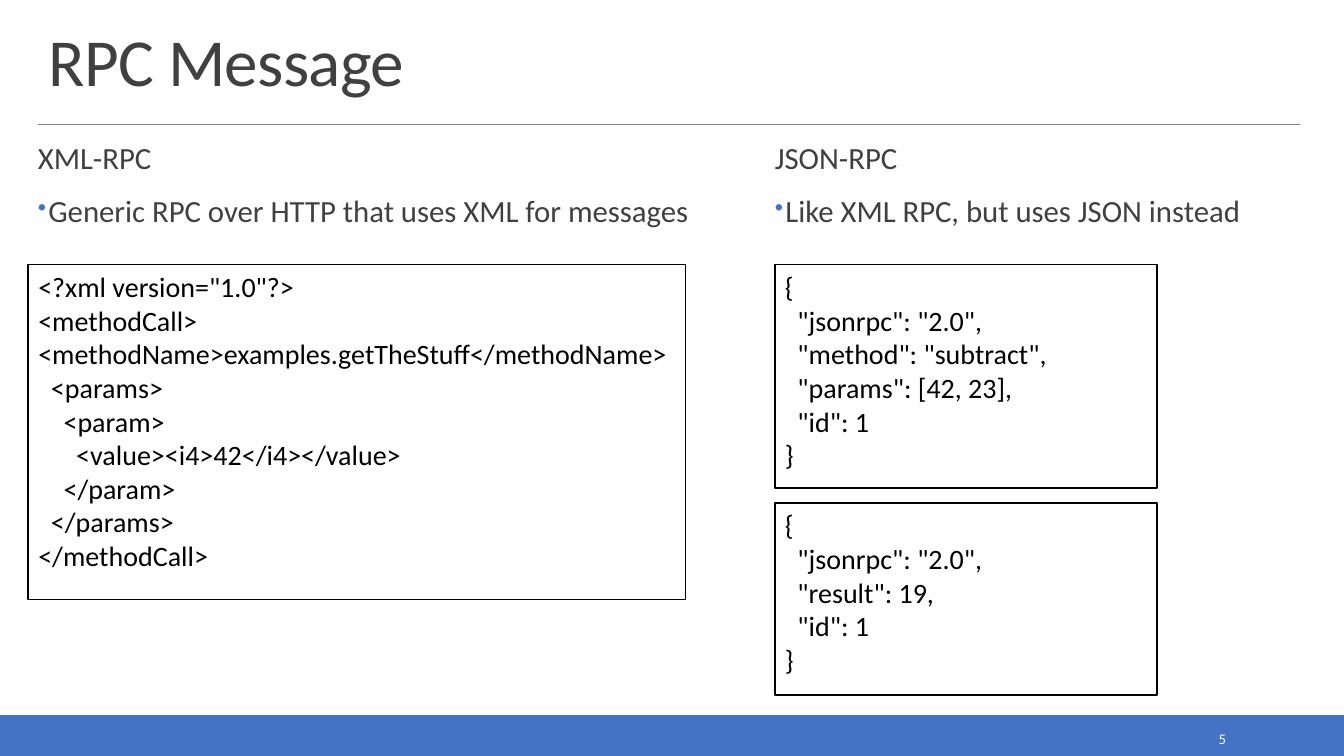
from dataclasses import dataclass

from lxml import etree
from pptx import Presentation
from pptx.dml.color import RGBColor
from pptx.enum.shapes import MSO_CONNECTOR, MSO_SHAPE
from pptx.enum.text import MSO_ANCHOR, PP_ALIGN
from pptx.oxml.ns import qn
from pptx.util import Pt

RECTANGLE = MSO_SHAPE.RECTANGLE
STRAIGHT = MSO_CONNECTOR.STRAIGHT
TOP, MIDDLE, BOTTOM = MSO_ANCHOR.TOP, MSO_ANCHOR.MIDDLE, MSO_ANCHOR.BOTTOM
LEFT, RIGHT = PP_ALIGN.LEFT, PP_ALIGN.RIGHT
EMU_PER_PX = 9525
BLANK_LAYOUT = 6


@dataclass(frozen=True)
class Theme:
    font: str = "Calibri"
    accent: str = "4472C4"
    text: str = "404040"
    rule: str = "808080"
    code: str = "000000"
    paper: str = "FFFFFF"
    title_size: float = 48
    body_size: float = 22
    code_size: float = 20
    number_size: float = 10.5
    outline: float = 1.25
    rule_width: float = 0.5


THEME = Theme()

XML_CALL = """<?xml version="1.0"?>
<methodCall>
<methodName>examples.getTheStuff</methodName>
  <params>
    <param>
      <value><i4>42</i4></value>
    </param>
  </params>
</methodCall>"""

JSON_CALL = """{
  "jsonrpc": "2.0",
  "method": "subtract",
  "params": [42, 23],
  "id": 1
}"""

JSON_REPLY = """{
  "jsonrpc": "2.0",
  "result": 19,
  "id": 1
}"""


def px(*lengths):
    return [length * EMU_PER_PX for length in lengths]


def color(code):
    return RGBColor.from_string(code)


def format_runs(text_frame, size, ink):
    for paragraph in text_frame.paragraphs:
        for run in paragraph.runs:
            run.font.name = THEME.font
            run.font.size = Pt(size)
            run.font.color.rgb = color(ink)


def add_text(slide, box, text, size, ink, anchor=TOP):
    text_frame = slide.shapes.add_textbox(*px(*box)).text_frame
    text_frame.word_wrap = True
    text_frame.vertical_anchor = anchor
    text_frame.text = text
    format_runs(text_frame, size, ink)
    return text_frame


def add_rectangle(slide, box, fill, outline):
    shape = slide.shapes.add_shape(RECTANGLE, *px(*box))
    shape.shadow.inherit = False
    shape.fill.solid()
    shape.fill.fore_color.rgb = color(fill)
    shape.line.color.rgb = color(outline)
    shape.line.width = Pt(THEME.outline)
    return shape


def add_bullet(paragraph):
    properties = paragraph._p.get_or_add_pPr()
    indent, = px(10)
    properties.set("marL", str(indent))
    properties.set("indent", str(-indent))
    bullet_color = etree.SubElement(properties, qn("a:buClr"))
    etree.SubElement(bullet_color, qn("a:srgbClr"), val=THEME.accent)
    etree.SubElement(properties, qn("a:buSzPct"), val="80000")
    etree.SubElement(properties, qn("a:buChar"), char="•")


def add_header(slide, box, title):
    left, top, width, height = box
    text_frame = add_text(slide, (left + 1, top, width, height - 18), title,
                          THEME.title_size, THEME.text, BOTTOM)
    paragraph = text_frame.paragraphs[0]
    paragraph.line_spacing = 0.85
    paragraph.runs[0].font._element.set("spc", "-50")
    rule_y = top + height
    rule = slide.shapes.add_connector(
        STRAIGHT, *px(left, rule_y, left + width, rule_y))
    rule.line.color.rgb = color(THEME.rule)
    rule.line.width = Pt(THEME.rule_width)
    etree.SubElement(rule._element.spPr, qn("a:effectLst"))


def add_summary(slide, box, heading, point):
    text_frame = add_text(slide, box, f"{heading}\n{point}",
                          THEME.body_size, THEME.text)
    text_frame.margin_left = text_frame.margin_right = 0
    text_frame.margin_top, text_frame.margin_bottom = px(4, 4)
    heading_paragraph, point_paragraph = text_frame.paragraphs
    add_bullet(point_paragraph)
    point_paragraph.space_before = Pt(12)
    for paragraph in (heading_paragraph, point_paragraph):
        paragraph.line_spacing = 0.9
        paragraph.space_after = Pt(2)


def add_code(slide, box, code):
    shape = add_rectangle(slide, box, THEME.paper, THEME.code)
    text_frame = shape.text_frame
    text_frame.word_wrap = True
    text_frame.vertical_anchor = TOP
    text_frame.text = code
    for paragraph in text_frame.paragraphs:
        paragraph.alignment = LEFT
    format_runs(text_frame, THEME.code_size, THEME.code)


def add_footer(slide, box, number):
    left, top, width, height = box
    add_rectangle(slide, box, THEME.accent, THEME.accent)
    number_box = (left + width - 240, top + 8, 137, 27)
    text_frame = add_text(slide, number_box, number,
                          THEME.number_size, THEME.paper, MIDDLE)
    text_frame.paragraphs[0].alignment = RIGHT


def add_message_slide(presentation):
    slide = presentation.slides.add_slide(
        presentation.slide_layouts[BLANK_LAYOUT])
    add_footer(slide, (0, 682, 1280, 38), "5")
    add_header(slide, (36, 19, 1202, 99), "RPC Message")
    add_summary(slide, (36, 132, 626, 108), "XML-RPC",
                "Generic RPC over HTTP that uses XML for messages")
    add_summary(slide, (738, 132, 499, 108), "JSON-RPC",
                "Like XML RPC, but uses JSON instead")
    add_code(slide, (27, 252, 626, 319), XML_CALL)
    add_code(slide, (738, 252, 364, 213), JSON_CALL)
    add_code(slide, (738, 479, 364, 183), JSON_REPLY)


def main():
    presentation = Presentation()
    presentation.slide_width, presentation.slide_height = px(1280, 720)
    add_message_slide(presentation)
    presentation.save("out.pptx")


if __name__ == "__main__":
    main()
